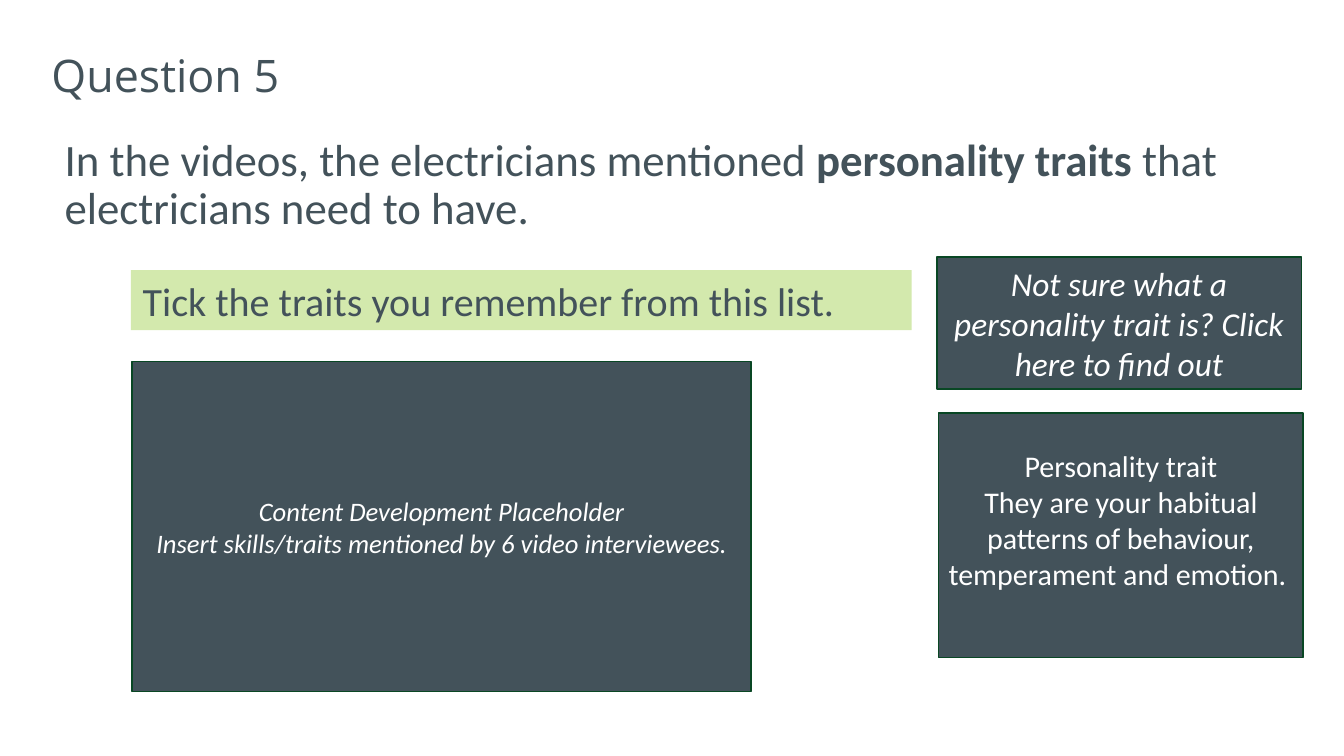
from pptx import Presentation
from pptx.dml.color import RGBColor
from pptx.enum.shapes import MSO_SHAPE
from pptx.enum.text import MSO_ANCHOR, PP_ALIGN
from pptx.util import Cm, Pt

SLATE, GREEN, LIME, WHITE = "43525A", "094724", "D3E9AD", "FFFFFF"


def rgb(value):
    return RGBColor.from_string(value)


def set_all(obj, values):
    for name, value in values.items():
        setattr(obj, name, value)


def write(tf, paragraphs, size, color, font="Calibri", italic=None, **layout):
    """Fill tf; each paragraph is a list of (text, bold) pieces."""
    tf.word_wrap = True
    for i, pieces in enumerate(paragraphs):
        p = tf.paragraphs[0] if i == 0 else tf.add_paragraph()
        set_all(p, layout)
        for text, bold in pieces:
            r = p.add_run()
            r.text = text
            set_all(r.font, {"name": font, "size": Pt(size),
                             "bold": bold, "italic": italic})
            r.font.color.rgb = rgb(color)


def add_text(s, box, pieces, anchor, **style):
    tf = s.shapes.add_textbox(*map(Cm, box)).text_frame
    tf.vertical_anchor = anchor
    write(tf, [pieces], 26.9, SLATE, line_spacing=0.9, **style)


def add_box(s, box, fill, line=None):
    sp = s.shapes.add_shape(MSO_SHAPE.RECTANGLE, *map(Cm, box))
    sp.shadow.inherit = False
    sp.fill.solid()
    sp.fill.fore_color.rgb = rgb(fill)
    if line:
        sp.line.color.rgb = rgb(line)
        sp.line.width = Pt(1)
    else:
        sp.line.fill.background()
    return sp


def add_panel(s, box, lines, size, italic=None, bottom=0.1):
    """Dark box with centred white lines; a larger bottom inset lifts them."""
    tf = add_box(s, box, SLATE, GREEN).text_frame
    set_all(tf, {"margin_left": Cm(0.2), "margin_right": Cm(0.2),
                 "margin_top": Cm(0.1), "margin_bottom": Cm(bottom),
                 "vertical_anchor": MSO_ANCHOR.MIDDLE})
    write(tf, [[(line, None)] for line in lines], size, WHITE,
          italic=italic, alignment=PP_ALIGN.CENTER)


def add_instruction(s, box, text):
    tf = add_box(s, box, LIME).text_frame
    tf.vertical_anchor = MSO_ANCHOR.TOP
    write(tf, [[(text, None)]], 24, SLATE, alignment=PP_ALIGN.LEFT)


def main():
    prs = Presentation()
    prs.slide_width, prs.slide_height = Cm(28.45), Cm(16)
    s = prs.slides.add_slide(prs.slide_layouts[6])

    add_text(s, (0.84, 0.79, 14.8, 1.5), [("Question 5", None)],
             MSO_ANCHOR.BOTTOM, font="Open Sans")
    add_text(s, (1.12, 2.79, 25.78, 2.62),
             [("In the videos, the electricians mentioned ", None),
              ("personality traits ", True),
              ("that electricians need to have.", None)],
             MSO_ANCHOR.TOP, space_before=Pt(8.4))

    add_panel(s, (2.8, 7.65, 13.1, 6.99),
              ["Content Development Placeholder",
               "Insert skills/traits mentioned by 6 video interviewees."],
              16, italic=True)
    add_panel(s, (19.87, 8.74, 7.72, 5.18),
              ["Personality trait",
               "They are your habitual patterns of behaviour, "
               "temperament and emotion. "],
              18, bottom=0.78)
    add_panel(s, (19.83, 5.44, 7.72, 2.79),
              ["Not sure what a personality trait is? Click here to find out"],
              20, italic=True)
    add_instruction(s, (2.77, 5.72, 16.53, 1.27),
                    "Tick the traits you remember from this list.")

    prs.save("out.pptx")


if __name__ == "__main__":
    main()
